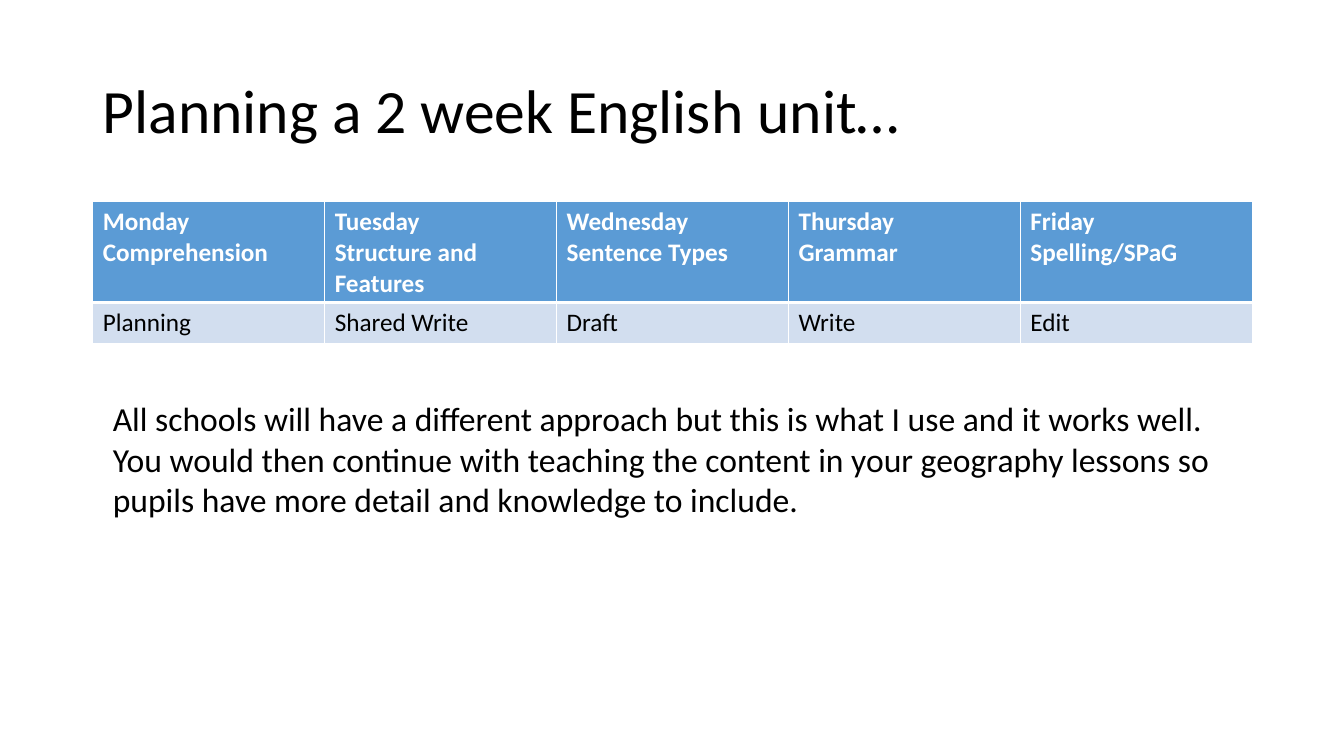
import pptx
import pptx.dml.color
import pptx.enum.text
import pptx.oxml
import pptx.oxml.ns
import pptx.util

Inches = pptx.util.Inches
Pt = pptx.util.Pt
ANCHOR = pptx.enum.text.MSO_ANCHOR

FONT = "Calibri"
COLORS = {"text": "000000", "white": "FFFFFF", "head": "5B9BD5", "band": "D2DEEF"}

TITLE = "Planning a 2 week English unit…"
WEEKS = [
    ["Monday\nComprehension", "Tuesday\nStructure and Features",
     "Wednesday\nSentence Types", "Thursday\nGrammar", "Friday\nSpelling/SPaG"],
    ["Planning", "Shared Write", "Draft", "Write", "Edit"],
]
NOTE = (
    "All schools will have a different approach but this is what I use and it works well.\n"
    "You would then continue with teaching the content in your geography lessons "
    "so pupils have more detail and knowledge to include."
)


def color(name):
    return pptx.dml.color.RGBColor.from_string(COLORS[name])


def write(frame, text, size, ink="text", bold=False, spacing=None):
    frame.text = text
    for para in frame.paragraphs:
        para.line_spacing = spacing
        para.font.name = FONT
        para.font.size = Pt(size)
        para.font.bold = bold
        para.font.color.rgb = color(ink)


def add_text(slide, box, text, size, anchor=ANCHOR.TOP, spacing=None):
    frame = slide.shapes.add_textbox(*map(Inches, box)).text_frame
    frame.word_wrap = True
    frame.vertical_anchor = anchor
    write(frame, text, size, spacing=spacing)


def set_edges(cell, widths):
    """Draw white borders, with widths in points by side."""
    props = cell._tc.get_or_add_tcPr()
    for side, width in widths.items():
        props.append(pptx.oxml.parse_xml(
            f'<a:ln{side} {pptx.oxml.ns.nsdecls("a")} w="{Pt(width)}"><a:solidFill>'
            f'<a:srgbClr val="{COLORS["white"]}"/></a:solidFill></a:ln{side}>'))


def add_plan(slide, box, heights):
    shape = slide.shapes.add_table(len(WEEKS), len(WEEKS[0]), *map(Inches, box))
    table = shape.table
    for row, height in zip(table.rows, heights):
        row.height = Inches(height)
    for r, week in enumerate(WEEKS):
        head = r == 0
        for c, text in enumerate(week):
            cell = table.cell(r, c)
            set_edges(cell, {"L": 1, "R": 1, "T": 1 if head else 3, "B": 3 if head else 1})
            cell.fill.solid()
            cell.fill.fore_color.rgb = color("head" if head else "band")
            write(cell.text_frame, text, 18, "white" if head else "text", head)


def main():
    deck = pptx.Presentation()
    deck.slide_width = Inches(13.33)
    deck.slide_height = Inches(7.5)
    slide = deck.slides.add_slide(deck.slide_layouts[6])
    add_text(slide, (0.92, 0.4, 11.5, 1.45), TITLE, 44, ANCHOR.MIDDLE, 0.9)
    add_plan(slide, (0.92, 2, 11.5, 1.41), (1, 0.41))
    add_text(slide, (1.02, 3.9, 11.29, 1.31), NOTE, 24)
    deck.save("out.pptx")


if __name__ == "__main__":
    main()
